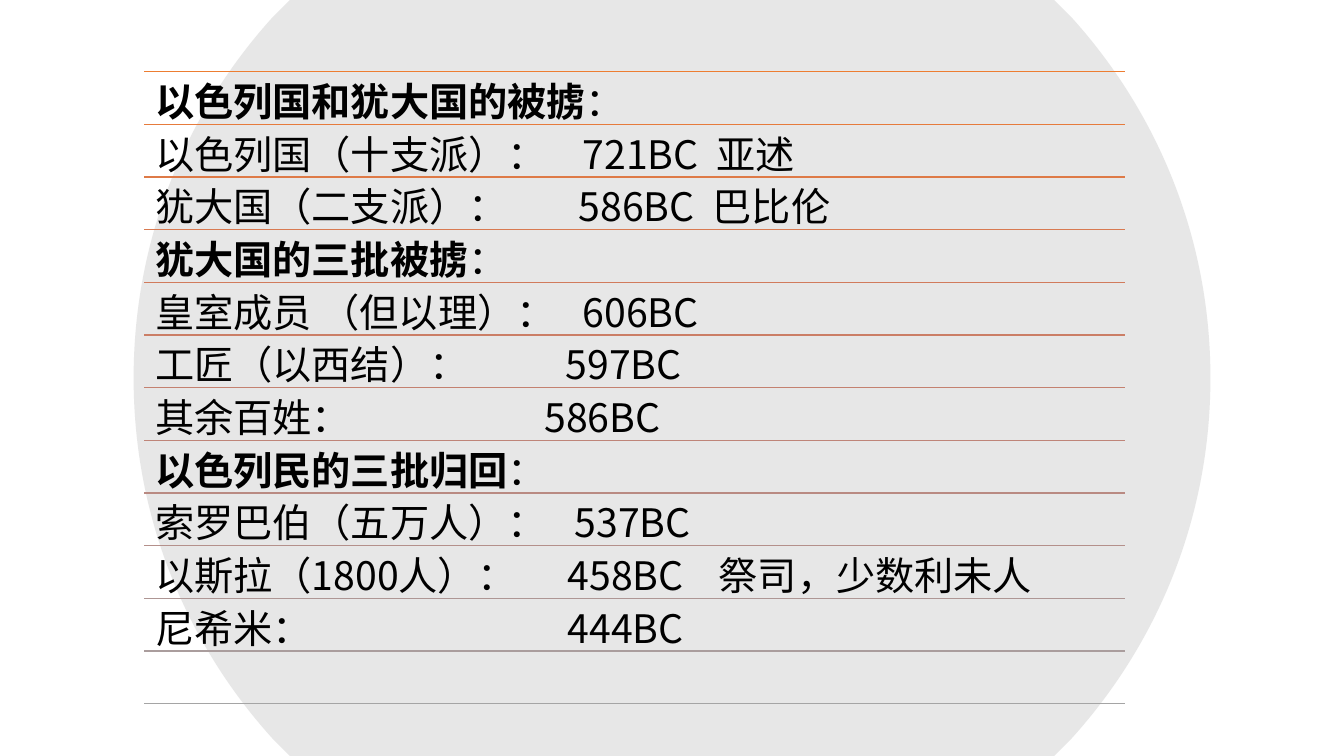
from lxml.etree import SubElement
from pptx import Presentation
from pptx.dml.color import RGBColor
from pptx.enum.lang import MSO_LANGUAGE_ID as LANG
from pptx.enum.shapes import MSO_CONNECTOR as CONNECTOR
from pptx.enum.text import MSO_ANCHOR as ANCHOR
from pptx.oxml.ns import qn
from pptx.util import Inches, Pt

FONT = "Noto Sans CJK SC"
INSET = 0.11
WIDTH, HEIGHT = 13.33, 7.5
RULE_COLORS = [
    "ED7D31", "E67B3C", "DE7A47", "D87A51", "D17B5C", "CB7E66", "C48170",
    "BF8579", "B98A82", "B4908B", "AE9694", "AA9D9D", "A5A5A5",
]
# Right half of the disc around its centre: control points (if curved), then end point
DISC_HALF = [
    [(3.79, -3.75)],
    [(3.96, -3.58)],
    [(4.82, -2.63), (5.34, -1.38), (5.34, 0)],
    [(5.34, 1.38), (4.82, 2.63), (3.96, 3.58)],
    [(3.79, 3.75)],
]
# Heading (bold), then its events: label, date, note and their tab positions in inches
CHRONOLOGY = [
    ("以色列国和犹大国的被掳", [
        ("以色列国（十支派）：\t721BC\t亚述", (4.24, 5.57)),
        ("犹大国（二支派）：\t586BC\t巴比伦", (4.2, 5.53)),
    ]),
    ("犹大国的三批被掳", [
        ("皇室成员 （但以理）：\t606BC", (4.24,)),
        ("工匠（以西结）：\t597BC", (4.07,)),
        ("其余百姓：\t586BC", (3.86,)),
    ]),
    ("以色列民的三批归回", [
        ("索罗巴伯（五万人）：\t537BC", (4.16,)),
        ("以斯拉（1800人）：\t458BC\t祭司，少数利未人", (4.09, 5.59)),
        ("尼希米：\t444BC", (4.09,)),
    ]),
]


def rgb(value):
    return RGBColor.from_string(value)


def add_backdrop(slide, center_x, center_y):
    """Grey disc cut off by the top and bottom edges of the slide."""
    segments = [[(Inches(center_x + sign * x), Inches(center_y + sign * y))
                 for x, y in segment]
                for sign in (1, -1) for segment in DISC_HALF]
    corners = [segment[-1] for segment in segments]
    builder = slide.shapes.build_freeform(*corners[0])
    builder.add_line_segments(corners[1:], close=True)
    disc = builder.convert_to_shape()
    sides = list(disc._element.iter(qn("a:lnTo")))
    for side, (*controls, _) in zip(sides, segments[1:]):
        if controls:
            side.addprevious(curve := side.makeelement(qn("a:cubicBezTo")))
            for x, y in controls:
                SubElement(curve, qn("a:pt"), x=str(x - disc.left), y=str(y - disc.top))
            curve.append(side[0])
            side.getparent().remove(side)
    disc.shadow.inherit = False
    disc.line.fill.background()
    disc.fill.solid()
    disc.fill.fore_color.rgb = rgb("D9D9D9")
    color = disc.fill._xPr.find(qn("a:solidFill"))[0]
    SubElement(color, qn("a:alpha"), val="62000")


def add_rule(slide, left, top, width, color):
    rule = slide.shapes.add_connector(
        CONNECTOR.STRAIGHT, Inches(left), Inches(top), Inches(left + width), Inches(top))
    rule.line.color.rgb = rgb(color)
    rule.line.width = Pt(1)
    SubElement(rule._element.spPr, qn("a:effectLst"))


def add_entry(slide, left, top, width, height, runs, tabs):
    """One line of text from (text, bold) runs, with tab stops in inches."""
    entry = slide.shapes.add_textbox(*map(Inches, (left, top, width, height)))
    frame = entry.text_frame
    frame_format = {"word_wrap": True, "vertical_anchor": ANCHOR.TOP}
    for side in ("left", "top", "right", "bottom"):
        frame_format[f"margin_{side}"] = Inches(INSET)
    for name, value in frame_format.items():
        setattr(frame, name, value)
    paragraph = frame.paragraphs[0]
    paragraph.line_spacing = 0.9
    if tabs:
        tab_list = SubElement(paragraph._p.get_or_add_pPr(), qn("a:tabLst"))
        for position in tabs:
            SubElement(tab_list, qn("a:tab"), pos=str(Inches(position)), algn="l")
    for text, bold in runs:
        run = paragraph.add_run()
        run.text = text
        run_format = {"name": FONT, "size": Pt(28), "bold": bold,
                      "language_id": LANG.SIMPLIFIED_CHINESE}
        for name, value in run_format.items():
            setattr(run.font, name, value)
        run.font.color.rgb = rgb("000000")
        SubElement(run.font._element, qn("a:ea"), typeface=FONT)


def add_chronology(slide, left, top, width, height):
    """Ruled list that spreads its rules evenly over the box."""
    pitch = height / (len(RULE_COLORS) - 1)
    for row, color in enumerate(RULE_COLORS):
        add_rule(slide, left, top + row * pitch, width, color)
    entries = []
    for heading, events in CHRONOLOGY:
        entries.append(([(heading, True), ("：", False)], ()))
        entries += [([(text, False)], tabs) for text, tabs in events]
    for row, (runs, tabs) in enumerate(entries):
        add_entry(slide, left, top + row * pitch, width, pitch, runs, tabs)


def main():
    deck = Presentation()
    deck.slide_width, deck.slide_height = Inches(WIDTH), Inches(HEIGHT)
    slide = deck.slides.add_slide(deck.slide_layouts[6])
    add_backdrop(slide, WIDTH / 2, HEIGHT / 2)
    add_chronology(slide, 1.43, 0.71, 9.73, 6.27)
    deck.save("out.pptx")


if __name__ == "__main__":
    main()
